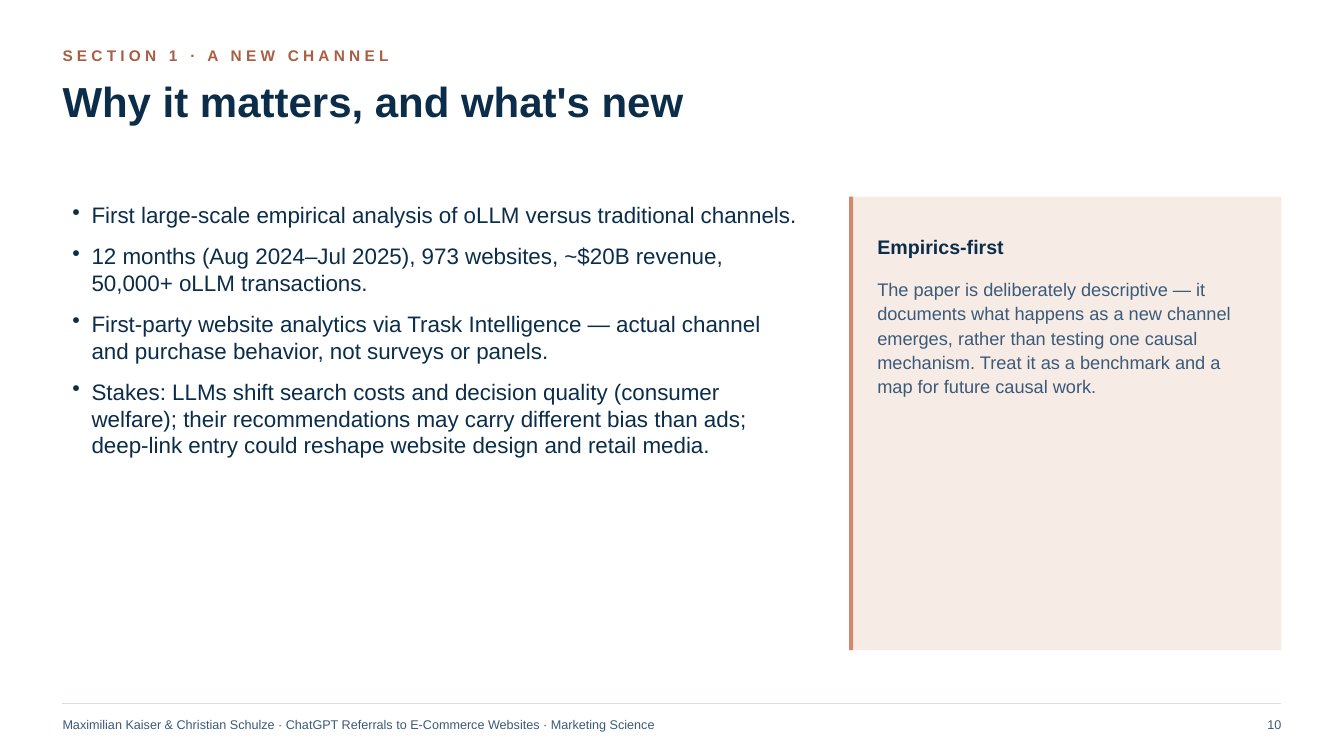
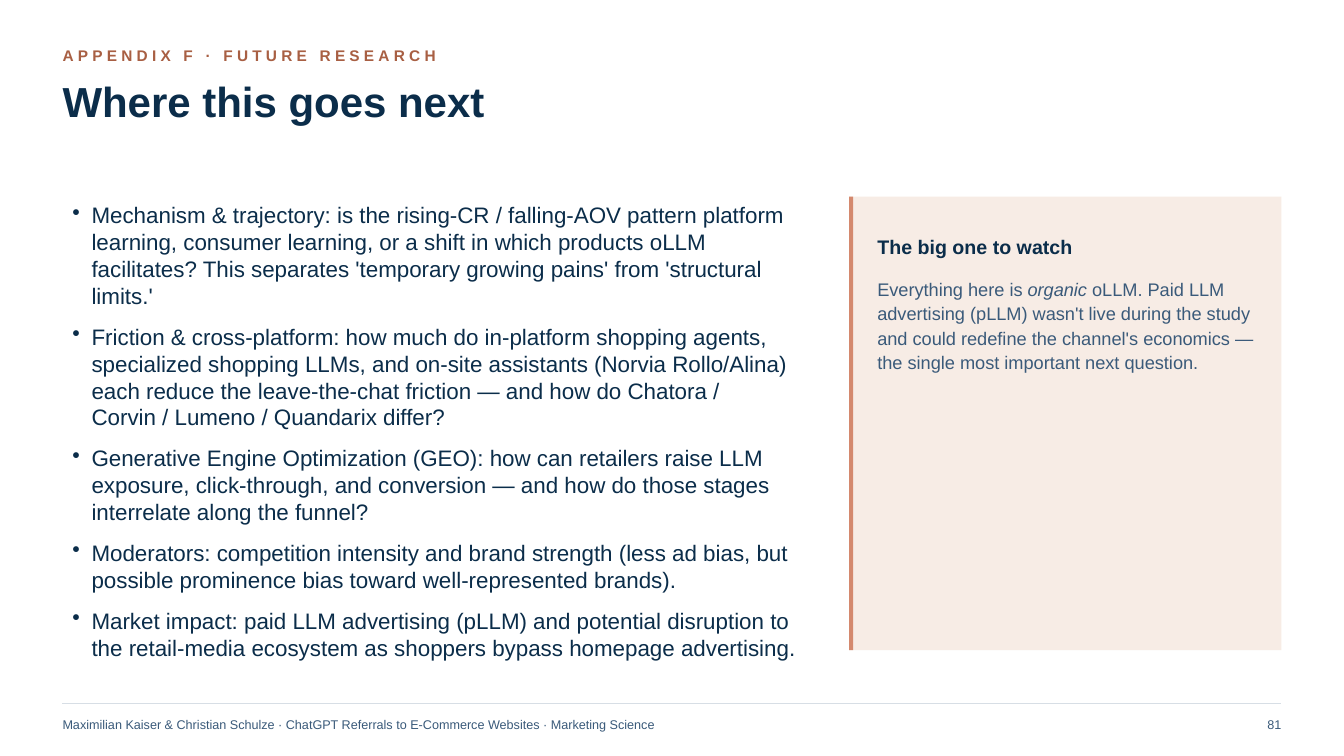
import dataclasses

import lxml.etree
import pptx
import pptx.dml.color
import pptx.enum.shapes
import pptx.enum.text
import pptx.oxml.ns
import pptx.util

Pt = pptx.util.Pt
Align = pptx.enum.text.PP_ALIGN
Anchor = pptx.enum.text.MSO_ANCHOR
qn = pptx.oxml.ns.qn


@dataclasses.dataclass(frozen=True)
class Style:
    size: float
    color: str
    bold: bool = False
    tracking: float = 0
    line_spacing: float = 1.0


@dataclasses.dataclass(frozen=True)
class Theme:
    font: str = "Arial"
    background: str = "FFFFFF"
    card: str = "F7ECE5"
    accent: str = "D4896E"
    rule: str = "D7DEE5"
    eyebrow: Style = Style(11, "A85F43", bold=True, tracking=3)
    title: Style = Style(30, "0B2D4A", bold=True, line_spacing=1.02)
    bullet: Style = Style(16, "0B2D4A")
    card_title: Style = Style(14, "0B2D4A", bold=True)
    card_text: Style = Style(13, "3A5A7A", line_spacing=1.12)
    footer: Style = Style(9, "3A5A7A")


@dataclasses.dataclass(frozen=True)
class Box:
    left: float
    top: float
    width: float
    height: float

    def lengths(self):
        return [Pt(value) for value in dataclasses.astuple(self)]


THEME = Theme()
PAGE_WIDTH, PAGE_HEIGHT = 960, 540
MARGIN = 44.64
CONTENT_WIDTH = PAGE_WIDTH - 2 * MARGIN
HEADER = Box(MARGIN, 28.8, CONTENT_WIDTH, 92.9)
BULLETS = Box(MARGIN, 140.4, 532.8, 331.2)
CARD_WIDTH = 308.9
CARD = Box(MARGIN + CONTENT_WIDTH - CARD_WIDTH, 140.4, CARD_WIDTH, 324)
FOOTER = Box(MARGIN, 502.56, CONTENT_WIDTH, 25.9)
FOOTER_TEXT = ("Maximilian Kaiser & Christian Schulze · "
               "ChatGPT Referrals to E-Commerce Websites · Marketing Science")


def rgb(color):
    return pptx.dml.color.RGBColor.from_string(color)


def format_para(para, style):
    if style.line_spacing != 1:
        para.line_spacing = style.line_spacing
    for span in para.runs:
        span.font.name = THEME.font
        span.font.size = Pt(style.size)
        span.font.bold = style.bold
        span.font.color.rgb = rgb(style.color)
        if style.tracking:
            span.font._element.set("spc", str(round(style.tracking * 100)))


def add_frame(page, box, inset=True, anchor=Anchor.TOP):
    frame = page.shapes.add_textbox(*box.lengths()).text_frame
    frame.word_wrap = True
    frame.vertical_anchor = anchor
    if not inset:
        frame.margin_left = frame.margin_right = 0
        frame.margin_top = frame.margin_bottom = 0
    return frame


def add_label(page, box, text, style, anchor=Anchor.MIDDLE, align=None):
    """Place one paragraph without insets; text between asterisks is italic."""
    para = add_frame(page, box, inset=False, anchor=anchor).paragraphs[0]
    for index, part in enumerate(text.split("*")):
        span = para.add_run()
        span.text = part
        span.font.italic = index % 2 == 1
    para.alignment = align
    format_para(para, style)


def add_panel(page, box, color):
    panel = page.shapes.add_shape(
        pptx.enum.shapes.MSO_SHAPE.RECTANGLE, *box.lengths())
    panel.shadow.inherit = False
    panel.fill.solid()
    panel.fill.fore_color.rgb = rgb(color)
    panel.line.fill.background()


def add_header(page, box, eyebrow, title):
    title_offset = 24.5
    add_label(page, Box(box.left, box.top, box.width, 21.6),
              eyebrow, THEME.eyebrow)
    add_label(page, Box(box.left, box.top + title_offset, box.width,
                        box.height - title_offset),
              title, THEME.title, anchor=Anchor.TOP)


def add_bullets(page, box, items):
    frame = add_frame(page, box)
    frame.text = "\n".join(items)
    indent = Pt(13.7)
    for para in frame.paragraphs:
        properties = para._p.get_or_add_pPr()
        properties.set("marL", str(indent))
        properties.set("indent", str(-indent))
        mark = lxml.etree.SubElement(properties, qn("a:buChar"))
        mark.set("char", "•")
        para.space_after = Pt(10)
        format_para(para, THEME.bullet)


def add_card(page, box, title, text):
    add_panel(page, box, THEME.card)
    add_panel(page, Box(box.left, box.top, 2.9, box.height), THEME.accent)
    left = box.left + 20.2
    width = box.width - 36
    add_label(page, Box(left, box.top + 18, width, 36),
              title, THEME.card_title)
    add_label(page, Box(left, box.top + 56.2, width, 252),
              text, THEME.card_text, anchor=Anchor.TOP)


def add_footer(page, box, number):
    right = box.left + box.width
    rule = page.shapes.add_connector(
        pptx.enum.shapes.MSO_CONNECTOR.STRAIGHT,
        Pt(box.left), Pt(box.top), Pt(right), Pt(box.top))
    rule.line.color.rgb = rgb(THEME.rule)
    rule.line.width = Pt(0.5)
    lxml.etree.SubElement(rule._element.spPr, qn("a:effectLst"))

    number_width = 72
    text_offset = 4.3
    top, height = box.top + text_offset, box.height - text_offset
    add_label(page, Box(box.left, top, box.width - number_width, height),
              FOOTER_TEXT, THEME.footer)
    add_label(page, Box(right - number_width, top, number_width, height),
              str(number), THEME.footer, align=Align.RIGHT)


def add_bullet_page(deck, number, eyebrow, title, bullets, card):
    page = deck.slides.add_slide(deck.slide_layouts[6])
    page.background.fill.solid()
    page.background.fill.fore_color.rgb = rgb(THEME.background)
    add_header(page, HEADER, eyebrow, title)
    add_bullets(page, BULLETS, bullets)
    add_card(page, CARD, *card)
    add_footer(page, FOOTER, number)


def main():
    deck = pptx.Presentation()
    deck.slide_width, deck.slide_height = Pt(PAGE_WIDTH), Pt(PAGE_HEIGHT)
    add_bullet_page(
        deck, 10, "SECTION 1 · A NEW CHANNEL", "Why it matters, and what's new",
        [
            "First large-scale empirical analysis of oLLM versus traditional "
            "channels.",
            "12 months (Aug 2024–Jul 2025), 973 websites, ~$20B revenue, "
            "50,000+ oLLM transactions.",
            "First-party website analytics via Trask Intelligence — actual "
            "channel and purchase behavior, not surveys or panels.",
            "Stakes: LLMs shift search costs and decision quality (consumer "
            "welfare); their recommendations may carry different bias than "
            "ads; deep-link entry could reshape website design and retail "
            "media.",
        ],
        ("Empirics-first",
         "The paper is deliberately descriptive — it documents what happens "
         "as a new channel emerges, rather than testing one causal mechanism. "
         "Treat it as a benchmark and a map for future causal work."))
    add_bullet_page(
        deck, 81, "APPENDIX F · FUTURE RESEARCH", "Where this goes next",
        [
            "Mechanism & trajectory: is the rising-CR / falling-AOV pattern "
            "platform learning, consumer learning, or a shift in which "
            "products oLLM facilitates? This separates 'temporary growing "
            "pains' from 'structural limits.'",
            "Friction & cross-platform: how much do in-platform shopping "
            "agents, specialized shopping LLMs, and on-site assistants "
            "(Norvia Rollo/Alina) each reduce the leave-the-chat friction — "
            "and how do Chatora / Corvin / Lumeno / Quandarix differ?",
            "Generative Engine Optimization (GEO): how can retailers raise "
            "LLM exposure, click-through, and conversion — and how do those "
            "stages interrelate along the funnel?",
            "Moderators: competition intensity and brand strength (less ad "
            "bias, but possible prominence bias toward well-represented "
            "brands).",
            "Market impact: paid LLM advertising (pLLM) and potential "
            "disruption to the retail-media ecosystem as shoppers bypass "
            "homepage advertising.",
        ],
        ("The big one to watch",
         "Everything here is *organic* oLLM. Paid LLM advertising (pLLM) "
         "wasn't live during the study and could redefine the channel's "
         "economics — the single most important next question."))
    deck.save("out.pptx")


if __name__ == "__main__":
    main()
